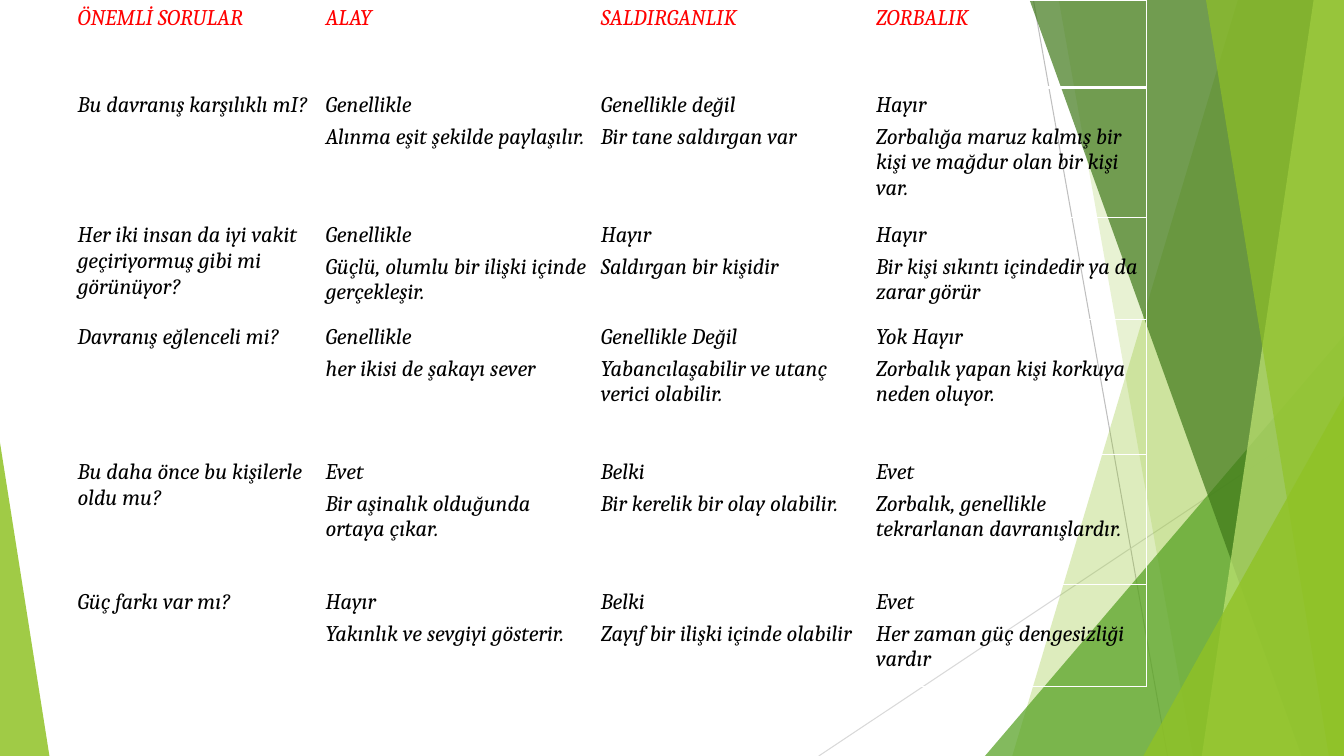
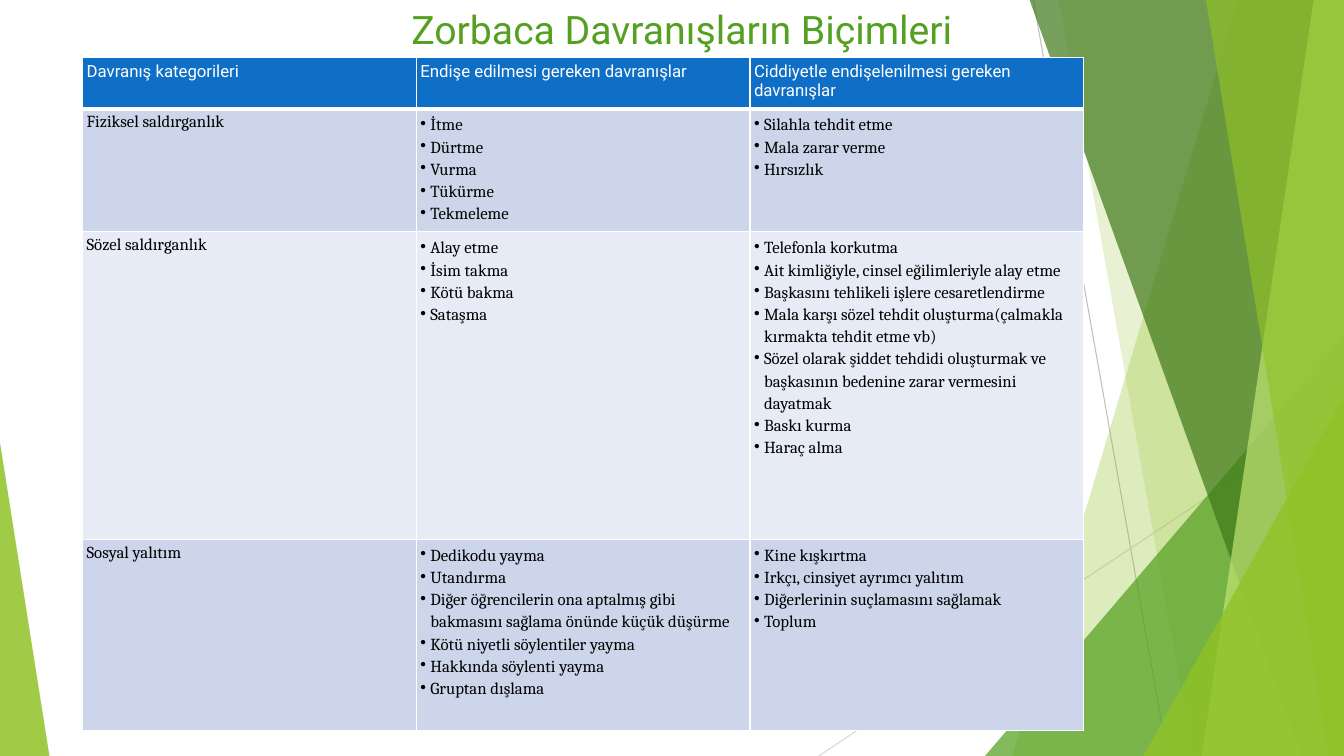
import pptx
import pptx.util
import pptx.dml.color
import pptx.enum.shapes
import pptx.enum.text
import pptx.oxml
from pptx.oxml.ns import qn, nsdecls

HUES = {
    "lime": "90C226", "green": "54A021", "dark": "3F7819", "pale": "C0E474",
    "gray": "BFBFBF", "mist": "D9D9D9", "white": "FFFFFF", "black": "000000",
    "red": "FF0000", "blue": "0F6FC6", "band": "CCD5EA", "light": "E7EBF5",
}
WIDE, HIGH = pptx.util.Inches(13.33), pptx.util.Inches(7.5)
TOP = -0.1

# Points are percent of the slide's width and height
RAYS = [
    ("gray", (76.89, 0), (86.87, 100)),
    ("mist", (100, 53.73), (60.92, 100)),
]
FACETS = [
    ("lime", 30, [(92.12, TOP), (100, TOP), (100, 100), (75.32, 100)]),
    ("lime", 20, [(78.77, TOP), (100, TOP), (100, 100), (88.75, 100)]),
    ("green", 72, [(73.29, 100), (100, 44.4), (100, 100)]),
    ("dark", 70, [(76.59, TOP), (100, TOP), (100, 100), (96.85, 100)]),
    ("pale", 70, [(97.75, TOP), (100, TOP), (100, 100), (89.42, 100)]),
    ("lime", 65, [(89.72, TOP), (100, TOP), (100, 100), (98.87, 100)]),
    ("lime", 80, [(85.07, 100), (100, 52.4), (100, 100)]),
    ("lime", 85, [(0, 100), (0, 58.53), (3.68, 100)]),
]

ASKED = [
    [["ÖNEMLİ SORULAR"], ["ALAY"], ["SALDIRGANLIK"], ["ZORBALIK"]],
    [["Bu davranış karşılıklı mI?"],
     ["Genellikle", "Alınma eşit şekilde paylaşılır."],
     ["Genellikle değil", "Bir tane saldırgan var"],
     ["Hayır", "Zorbalığa maruz kalmış bir kişi ve mağdur olan bir kişi var."]],
    [["Her iki insan da iyi vakit geçiriyormuş gibi mi görünüyor?"],
     ["Genellikle", "Güçlü, olumlu bir ilişki içinde gerçekleşir."],
     ["Hayır", "Saldırgan bir kişidir"],
     ["Hayır", "Bir kişi sıkıntı içindedir ya da zarar görür"]],
    [["Davranış eğlenceli mi?"],
     ["Genellikle", "her ikisi de şakayı sever"],
     ["Genellikle Değil", "Yabancılaşabilir ve utanç verici olabilir."],
     ["Yok Hayır", "Zorbalık yapan kişi korkuya neden oluyor."]],
    [["Bu daha önce bu kişilerle oldu mu?"],
     ["Evet", "Bir aşinalık olduğunda ortaya çıkar."],
     ["Belki", "Bir kerelik bir olay olabilir."],
     ["Evet", "Zorbalık, genellikle tekrarlanan davranışlardır."]],
    [["Güç farkı var mı?"],
     ["Hayır", "Yakınlık ve sevgiyi gösterir."],
     ["Belki", "Zayıf bir ilişki içinde olabilir"],
     ["Evet", "Her zaman güç dengesizliği vardır"]],
]
FORMS = [
    [["Davranış kategorileri"], ["Endişe edilmesi gereken davranışlar"],
     ["Ciddiyetle endişelenilmesi gereken davranışlar"]],
    [["Fiziksel saldırganlık"],
     ["İtme", "Dürtme", "Vurma", "Tükürme", "Tekmeleme"],
     ["Silahla tehdit etme", "Mala zarar verme", "Hırsızlık"]],
    [["Sözel saldırganlık"],
     ["Alay etme", "İsim takma", "Kötü bakma", "Sataşma"],
     ["Telefonla korkutma",
      "Ait kimliğiyle, cinsel eğilimleriyle alay etme",
      "Başkasını tehlikeli işlere cesaretlendirme",
      "Mala karşı sözel tehdit oluşturma(çalmakla kırmakta tehdit etme vb)",
      "Sözel olarak şiddet tehdidi oluşturmak ve başkasının bedenine zarar vermesini dayatmak",
      "Baskı kurma", "Haraç alma"]],
    [["Sosyal yalıtım"],
     ["Dedikodu yayma", "Utandırma",
      "Diğer öğrencilerin ona aptalmış gibi bakmasını sağlama önünde küçük düşürme",
      "Kötü niyetli söylentiler yayma", "Hakkında söylenti yayma", "Gruptan dışlama"],
     ["Kine kışkırtma", "Irkçı, cinsiyet ayrımcı yalıtım",
      "Diğerlerinin suçlamasını sağlamak", "Toplum"]],
]


def hue(name):
    return pptx.dml.color.RGBColor.from_string(HUES[name])


def across(share):
    return round(WIDE * share / 100)


def down(share):
    return round(HIGH * share / 100)


def spot(point):
    return across(point[0]), down(point[1])


def node(text):
    """Parse one DrawingML element, given without its namespace."""
    tag, rest = text[:text.index(" ")], text[text.index(" "):]
    return pptx.oxml.parse_xml(f"<{tag} {nsdecls('a')}{rest}")


def paint(fill, name):
    if name:
        fill.solid()
        fill.fore_color.rgb = hue(name)
    else:
        fill.background()


def write(para, text, size, font, color, slant=None):
    run = para.add_run()
    run.text = text
    run.font.size = pptx.util.Pt(size)
    run.font.name = font
    run.font.italic = slant
    run.font.color.rgb = hue(color)


def dress(deck, slide):
    """Draw the facets as one group and hand it to the slide master."""
    group = slide.shapes.add_group_shape()
    for name, start, end in RAYS:
        ray = group.shapes.add_connector(
            pptx.enum.shapes.MSO_CONNECTOR.STRAIGHT, *spot(start), *spot(end))
        ray.line.color.rgb = hue(name)
        ray.line.width = pptx.util.Pt(0.75)
        ray.element.spPr.append(node("a:effectLst />"))
    for name, alpha, points in FACETS:
        first, *rest = map(spot, points)
        pen = group.shapes.build_freeform(*first)
        pen.add_line_segments(rest, close=True)
        facet = pen.convert_to_shape()
        facet.shadow.inherit = False
        facet.line.fill.background()
        paint(facet.fill, name)
        tint = facet.element.spPr.find(".//" + qn("a:srgbClr"))
        tint.append(node(f'a:alpha val="{alpha * 1000}"/>'))
    deck.slide_master.shapes.element.insert(2, group.element)


def bullet(para):
    para.line_spacing = 1.15
    props = para._p.get_or_add_pPr()
    inset = pptx.util.Inches(0.1)
    props.set("marL", str(inset))
    props.set("indent", str(-inset))
    props.append(node(f'a:buClr ><a:srgbClr val="{HUES["black"]}"/></a:buClr>'))
    props.append(node('a:buChar char="•"/>'))


def edge(frame, count, thick):
    """Rule every cell in white, with a heavier line under the header."""
    for index, props in enumerate(frame.element.iter(qn("a:tcPr"))):
        row = index // count
        widths = {"L": 1, "R": 1, "T": thick if row == 1 else 1,
                  "B": thick if row == 0 else 1}
        for place, (side, width) in enumerate(widths.items()):
            props.insert(place, node(
                f'a:ln{side} w="{pptx.util.Pt(width)}"><a:solidFill>'
                f'<a:srgbClr val="{HUES["white"]}"/></a:solidFill></a:ln{side}>'))


def grid(slide, corner, cols, rows, data, pad, thick, fills, style):
    """Place a table; style(para, text, row, col) writes each paragraph."""
    frame = slide.shapes.add_table(
        len(rows), len(cols), *spot(corner), across(sum(cols)), down(sum(rows)))
    table = frame.table
    table.first_row = table.horz_banding = False
    for col, share in zip(table.columns, cols):
        col.width = across(share)
    for row, share in zip(table.rows, rows):
        row.height = down(share)
    for r, line in enumerate(data):
        for c, texts in enumerate(line):
            cell = table.cell(r, c)
            cell.margin_left = cell.margin_right = pptx.util.Inches(pad)
            cell.margin_top = cell.margin_bottom = pptx.util.Inches(pad)
            paint(cell.fill, fills[r])
            for n, text in enumerate(texts):
                body = cell.text_frame
                para = body.add_paragraph() if n else body.paragraphs[0]
                style(para, text, r, c)
    edge(frame, len(cols), thick)


def ask(slide):
    def style(para, text, row, col):
        para.space_before = pptx.util.Pt(4)
        write(para, text, 16, "Cambria", "black" if row else "red", True)

    grid(slide, (5.4, 0), [18.45] + [20.48] * 3,
         [11.6, 17.2, 13.47, 17.87, 17.2, 13.47], ASKED, 0.05, 2,
         [None] * len(ASKED), style)


def head(slide, text):
    title = slide.shapes.title
    title.left, title.top = spot((30.23, 0))
    title.width, title.height = spot((44.64, 7.2))
    frame = title.text_frame
    frame.word_wrap = True
    frame.auto_size = pptx.enum.text.MSO_AUTO_SIZE.NONE
    frame.vertical_anchor = pptx.enum.text.MSO_ANCHOR.TOP
    frame.margin_left = frame.margin_right = pptx.util.Inches(0.05)
    frame.margin_top = frame.margin_bottom = pptx.util.Inches(0.05)
    para = frame.paragraphs[0]
    para.alignment = pptx.enum.text.PP_ALIGN.LEFT
    write(para, text, 28, "Roboto", "green")


def sort(slide):
    def style(para, text, row, col):
        if row and col:
            bullet(para)
        write(para, text, 12, "Cambria" if row else "Roboto",
              "black" if row else "white")

    head(slide, "Zorbaca Davranışların Biçimleri")
    grid(slide, (6.15, 7.6), [24.83] * 3, [6.8, 16.27, 40.67, 25.33],
         FORMS, 0.04, 3, ["blue", "band", "light", "band"], style)


def main():
    deck = pptx.Presentation()
    deck.slide_width, deck.slide_height = WIDE, HIGH
    plain, titled = deck.slide_layouts[6], deck.slide_layouts[5]
    first = deck.slides.add_slide(plain)
    dress(deck, first)
    ask(first)
    sort(deck.slides.add_slide(titled))
    deck.save("out.pptx")


if __name__ == "__main__":
    main()
